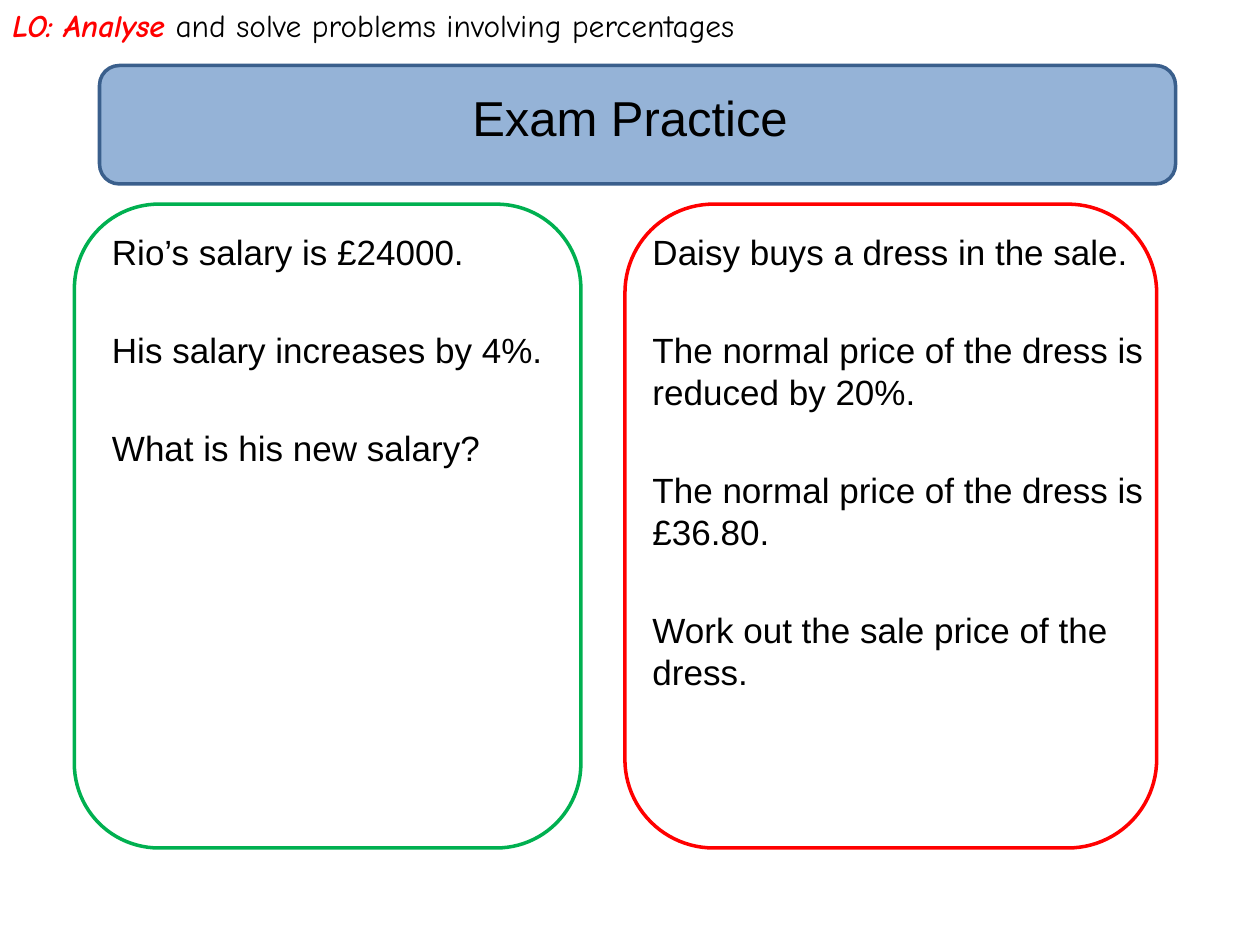
from dataclasses import dataclass

from pptx import Presentation
from pptx.dml.color import RGBColor as Color
from pptx.enum.shapes import MSO_SHAPE as Shape
from pptx.enum.text import MSO_ANCHOR as Anchor, PP_ALIGN as Align
from pptx.util import Pt


@dataclass(frozen=True)
class Theme:
    font: str = "Arial"
    objective_font: str = "Comic Neue"
    title_size: int = 28
    body_size: int = 20
    objective_size: int = 18
    line_height: int = 24
    question_gap: int = 32
    outline: int = 2
    black: Color = Color(0, 0, 0)
    red: Color = Color(0xFF, 0, 0)
    green: Color = Color(0, 0xB0, 0x50)
    banner: Color = Color(0x95, 0xB3, 0xD7)
    banner_line: Color = Color(0x3A, 0x5F, 0x8C)


THEME = Theme()
COLUMN_TOP, COLUMN_HEIGHT = 116.64, 367.92
TEXT_TOP, TEXT_WIDTH, TEXT_HEIGHT = 128.16, 318.24, 356.4

SALARY_QUESTION = [
    "Rio’s salary is £24000.",
    "His salary increases by 4%.",
    "What is his new salary?",
]
DRESS_QUESTION = [
    "Daisy buys a dress in the sale.",
    "The normal price of the dress is reduced by 20%.",
    "The normal price of the dress is £36.80.",
    "Work out the sale price of the dress.",
]


def add_span(para, text, size, font=THEME.font, color=THEME.black, strong=False):
    """Add a run; a strong one is bold and italic."""
    span = para.add_run()
    span.text = text
    span.font.size = Pt(size)
    span.font.name = font
    span.font.color.rgb = color
    span.font.bold = span.font.italic = strong


def add_frame(page, left, top, width, height, line, fill=None):
    """Add a rounded outline, filled only when a fill is given."""
    frame = page.shapes.add_shape(
        Shape.ROUNDED_RECTANGLE, Pt(left), Pt(top), Pt(width), Pt(height))
    frame.shadow.inherit = False
    frame.line.color.rgb = line
    frame.line.width = Pt(THEME.outline)
    if fill is None:
        frame.fill.background()
    else:
        frame.fill.solid()
        frame.fill.fore_color.rgb = fill


def add_text_box(page, left, top, width, height):
    box = page.shapes.add_textbox(Pt(left), Pt(top), Pt(width), Pt(height))
    box.text_frame.word_wrap = True
    return box.text_frame


def add_question(page, left, sentences):
    text = add_text_box(page, left, TEXT_TOP, TEXT_WIDTH, TEXT_HEIGHT)
    for index, sentence in enumerate(sentences):
        para = text.add_paragraph() if index else text.paragraphs[0]
        para.line_spacing = Pt(THEME.line_height)
        para.space_before = Pt(THEME.question_gap if index else 0)
        add_span(para, sentence, THEME.body_size)


def set_title(page, words):
    title = page.shapes.title
    title.left, title.top = Pt(36), Pt(21.6)
    title.width, title.height = Pt(648), Pt(90)
    title.text_frame.vertical_anchor = Anchor.MIDDLE
    para = title.text_frame.paragraphs[0]
    para.alignment = Align.CENTER
    add_span(para, words, THEME.title_size)
    # Bring the title in front of its banner.
    title.element.getparent().append(title.element)


def add_objective(page):
    para = add_text_box(page, 0, 0, 581.04, 97.2).paragraphs[0]
    add_span(para, "LO: Analyse", THEME.objective_size,
             THEME.objective_font, THEME.red, strong=True)
    add_span(para, " and solve problems involving percentages",
             THEME.objective_size, THEME.objective_font)


def main():
    deck = Presentation()
    deck.slide_width, deck.slide_height = Pt(720), Pt(540)
    page = deck.slides.add_slide(deck.slide_layouts.get_by_name("Title Only"))

    add_frame(page, 357.12, COLUMN_TOP, 303.84, COLUMN_HEIGHT, THEME.red)
    add_frame(page, 42.48, COLUMN_TOP, 289.44, COLUMN_HEIGHT, THEME.green)
    add_frame(page, 56.88, 37.44, 614.88, 67.68, THEME.banner_line, THEME.banner)
    set_title(page, "Exam Practice")
    add_question(page, 56.88, SALARY_QUESTION)
    add_question(page, 365.76, DRESS_QUESTION)
    add_objective(page)

    deck.save("out.pptx")


if __name__ == "__main__":
    main()
